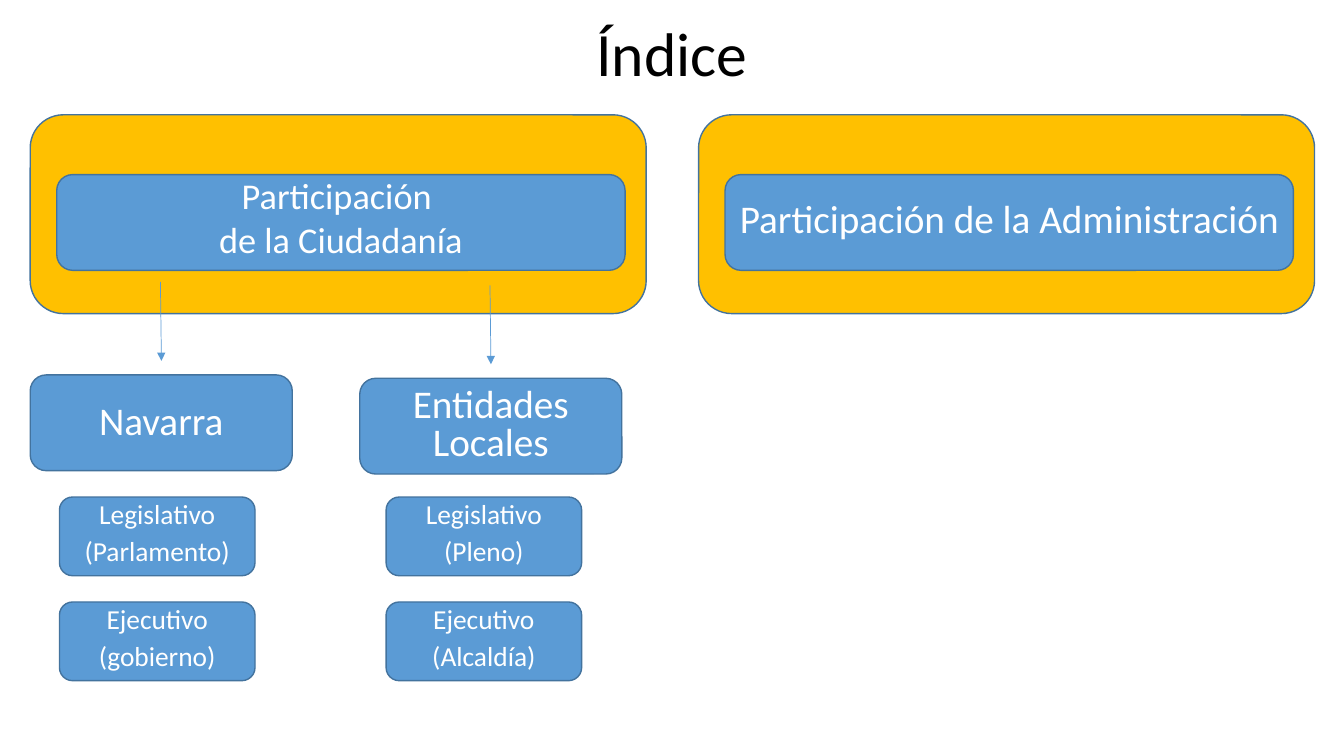
from dataclasses import dataclass

from lxml.etree import SubElement
from pptx import Presentation
from pptx.dml.color import RGBColor
from pptx.enum.shapes import MSO_CONNECTOR, MSO_SHAPE
from pptx.enum.text import MSO_ANCHOR, PP_ALIGN
from pptx.oxml.ns import qn
from pptx.util import Pt


@dataclass(frozen=True)
class Theme:
    font: str = "Calibri"
    black: RGBColor = RGBColor(0x00, 0x00, 0x00)
    white: RGBColor = RGBColor(0xFF, 0xFF, 0xFF)
    blue: RGBColor = RGBColor(0x5B, 0x9B, 0xD5)
    edge: RGBColor = RGBColor(0x43, 0x73, 0x9E)
    gold: RGBColor = RGBColor(0xFF, 0xC0, 0x00)
    title: float = 44
    heading: float = 28
    topic: float = 25.9
    detail: float = 19.6


THEME = Theme()

PANEL_TOP, PANEL_W, PANEL_H = 82, 440, 142
TOPIC_DX, TOPIC_DY, TOPIC_W = 18.9, 42.7, 406
BOX_W, BOX_H = 187.2, 68.4
DETAIL_W, DETAIL_H, DETAIL_TOP, DETAIL_STEP = 139.7, 56.2, 355, 75

# left, lines, type size, line spacing
PANELS = [
    (21.6, ["Participación ", "de la Ciudadanía"], THEME.topic, 0.7),
    (499, ["Participación de la Administración"], THEME.heading, 0.8),
]
# left, top, name, line spacing, left of details, details
BRANCHES = [
    (21.6, 267.8, "Navarra", 0.9, 42.5,
     [["Legislativo", "(Parlamento)"], ["Ejecutivo", "(gobierno)"]]),
    (257, 270.2, "Entidades Locales", 0.8, 275.8,
     [["Legislativo", "(Pleno)"], ["Ejecutivo", "(Alcaldía)"]]),
]


def format_paragraph(p, size, color, spacing):
    p.alignment = PP_ALIGN.CENTER
    p.line_spacing = spacing
    p.font.name = THEME.font
    p.font.size = Pt(size)
    p.font.color.rgb = color


def add_title(s, text):
    sp = s.shapes.title
    sp.left, sp.top, sp.width, sp.height = Pt(66), Pt(5), Pt(828), Pt(70.6)
    tf = sp.text_frame
    tf.text = text
    tf.vertical_anchor = MSO_ANCHOR.MIDDLE
    format_paragraph(tf.paragraphs[0], THEME.title, THEME.black, 0.9)


def add_box(s, x, y, w, h, fill):
    sp = s.shapes.add_shape(MSO_SHAPE.FLOWCHART_ALTERNATE_PROCESS,
                            Pt(x), Pt(y), Pt(w), Pt(h))
    sp.shadow.inherit = False
    sp.fill.solid()
    sp.fill.fore_color.rgb = fill
    sp.line.color.rgb = THEME.edge
    sp.line.width = Pt(1)
    return sp


def add_label(s, x, y, w, h, lines, size, spacing):
    """Add a blue box with one centred paragraph per line."""
    tf = add_box(s, x, y, w, h, THEME.blue).text_frame
    tf.word_wrap = True
    tf.vertical_anchor = MSO_ANCHOR.MIDDLE
    tf.margin_left = tf.margin_right = Pt(3.6)
    tf.text = "\n".join(lines)
    for p in tf.paragraphs:
        format_paragraph(p, size, THEME.white, spacing)
        p.space_before = Pt(10)


def add_arrow(s, x1, y1, x2, y2):
    c = s.shapes.add_connector(MSO_CONNECTOR.STRAIGHT,
                               Pt(x1), Pt(y1), Pt(x2), Pt(y2))
    c.line.color.rgb = THEME.blue
    c.line.width = Pt(0.5)
    SubElement(c.line._get_or_add_ln(), qn("a:tailEnd"), type="triangle")
    SubElement(c._element.spPr, qn("a:effectLst"))


def add_panel(s, x, lines, size, spacing):
    add_box(s, x, PANEL_TOP, PANEL_W, PANEL_H, THEME.gold)
    add_label(s, x + TOPIC_DX, PANEL_TOP + TOPIC_DY, TOPIC_W, BOX_H,
              lines, size, spacing)


def add_branch(s, x, y, name, spacing, detail_x, details):
    """Add an arrow, the box it points to and the details below."""
    add_arrow(s, x + 93, y - 66.4, x + 93.7, y - 10)
    add_label(s, x, y, BOX_W, BOX_H, [name], THEME.heading, spacing)
    for i, lines in enumerate(details):
        add_label(s, detail_x, DETAIL_TOP + i * DETAIL_STEP,
                  DETAIL_W, DETAIL_H, lines, THEME.detail, 0.7)


def main():
    prs = Presentation()
    prs.slide_width, prs.slide_height = Pt(960), Pt(540)
    s = prs.slides.add_slide(prs.slide_layouts[5])
    add_title(s, "Índice")
    for panel in PANELS:
        add_panel(s, *panel)
    for branch in BRANCHES:
        add_branch(s, *branch)
    prs.save("out.pptx")


if __name__ == "__main__":
    main()
